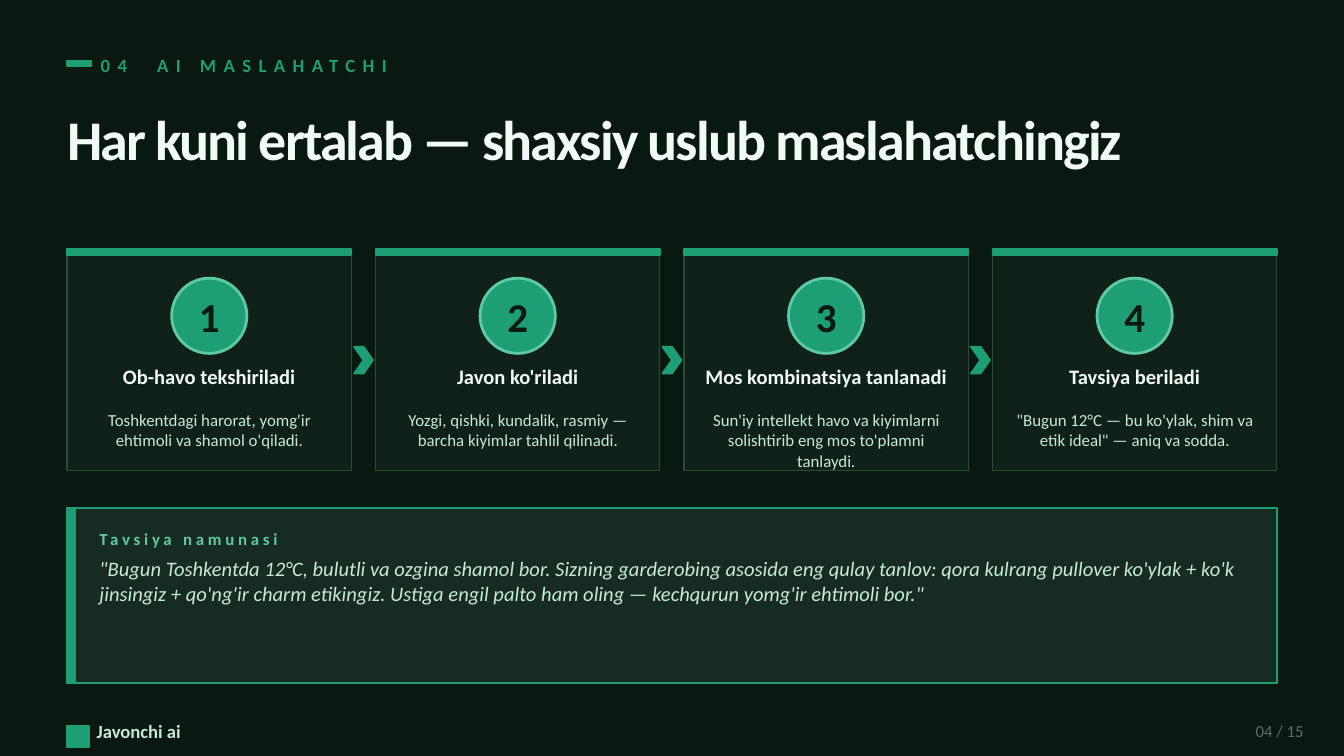
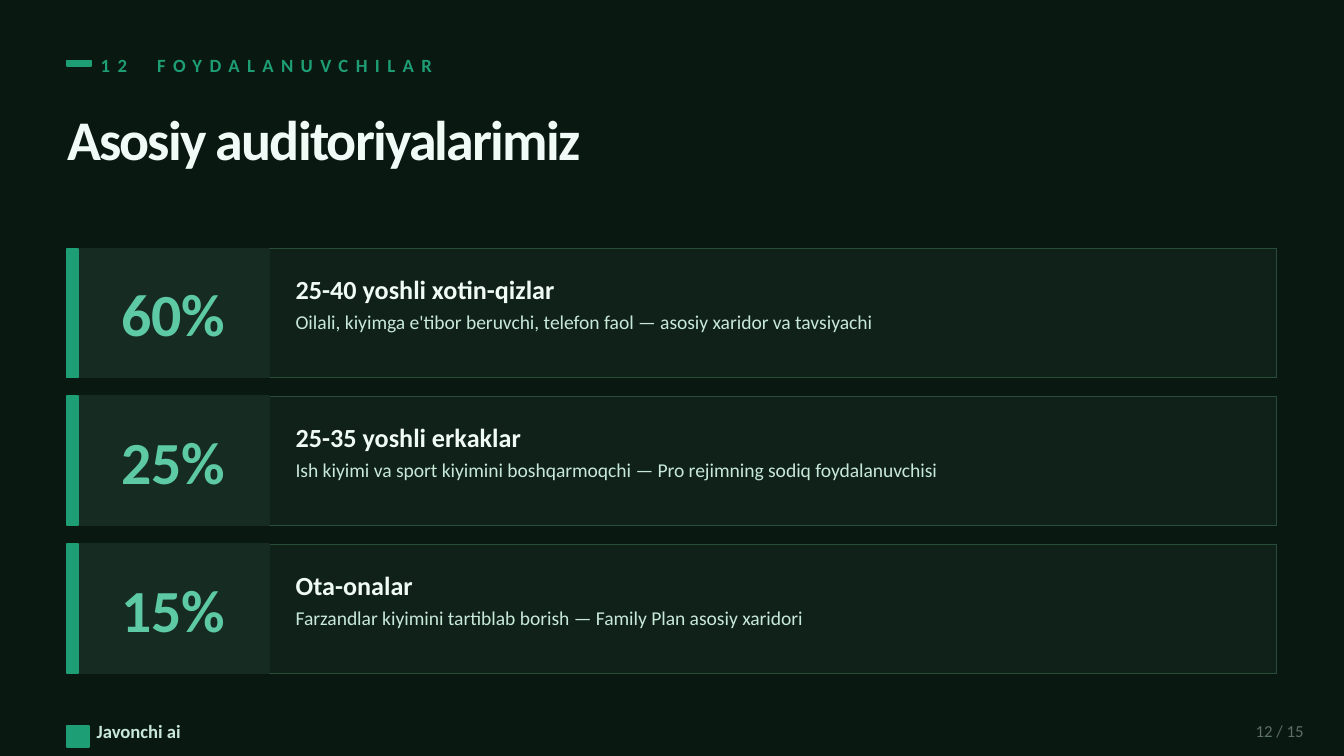
from dataclasses import dataclass

from lxml.etree import SubElement
from pptx import Presentation
from pptx.dml.color import RGBColor
from pptx.enum.shapes import MSO_SHAPE as Kind
from pptx.enum.text import MSO_ANCHOR as Anchor, PP_ALIGN as Align
from pptx.oxml.ns import qn
from pptx.slide import Slide
from pptx.text.text import _Paragraph as Para
from pptx.util import Inches, Pt

NIGHT = RGBColor(0x0A, 0x18, 0x12)
CARD = RGBColor(0x0F, 0x21, 0x19)
PANEL = RGBColor(0x16, 0x2C, 0x22)
EDGE = RGBColor(0x2A, 0x4D, 0x3A)
GREEN = RGBColor(0x1D, 0x9E, 0x75)
MINT = RGBColor(0x5D, 0xCA, 0xA5)
WHITE = RGBColor(0xF0, 0xFA, 0xF6)
PALE = RGBColor(0xC8, 0xE8, 0xD8)
GREY = RGBColor(0x5A, 0x70, 0x68)

LEFT, TOP, WIDTH = 0.5, 1.85, 9
TOTAL = 15
BRAND = "Javonchi ai"


@dataclass(frozen=True)
class Style:
    size: float
    color: RGBColor
    bold: bool = False
    italic: bool = False
    space: float = 0
    align: Align = Align.LEFT
    anchor: Anchor = Anchor.MIDDLE


@dataclass(frozen=True)
class Step:
    title: str
    body: str


@dataclass(frozen=True)
class Group:
    share: str
    title: str
    body: str


LABEL = Style(10, GREEN, bold=True, space=4)
TITLE = Style(30, WHITE, bold=True, space=-1)
NAME = Style(10, PALE, bold=True)
PAGE = Style(9, GREY, align=Align.RIGHT)
DIGIT = Style(22, NIGHT, bold=True, align=Align.CENTER)
STEP_HEAD = Style(11, WHITE, bold=True, align=Align.CENTER, anchor=Anchor.TOP)
STEP_BODY = Style(9, PALE, align=Align.CENTER, anchor=Anchor.TOP)
QUOTE_HEAD = Style(9, MINT, bold=True, space=2)
QUOTE = Style(11, PALE, italic=True, anchor=Anchor.TOP)
SHARE = Style(32, MINT, bold=True, align=Align.CENTER)
GROUP_HEAD = Style(14, WHITE, bold=True)
GROUP_BODY = Style(10.5, PALE, anchor=Anchor.TOP)

STEPS = [
    Step("Ob-havo tekshiriladi",
         "Toshkentdagi harorat, yomg'ir ehtimoli va shamol o'qiladi."),
    Step("Javon ko'riladi",
         "Yozgi, qishki, kundalik, rasmiy — barcha kiyimlar tahlil qilinadi."),
    Step("Mos kombinatsiya tanlanadi",
         "Sun'iy intellekt havo va kiyimlarni solishtirib eng mos to'plamni tanlaydi."),
    Step("Tavsiya beriladi",
         '"Bugun 12°C — bu ko\'ylak, shim va etik ideal" — aniq va sodda.'),
]

ADVICE = (
    '"Bugun Toshkentda 12°C, bulutli va ozgina shamol bor. Sizning garderobing '
    "asosida eng qulay tanlov: qora kulrang pullover ko'ylak + ko'k jinsingiz + "
    "qo'ng'ir charm etikingiz. Ustiga engil palto ham oling — kechqurun yomg'ir "
    'ehtimoli bor."'
)

GROUPS = [
    Group("60%", "25-40 yoshli xotin-qizlar",
          "Oilali, kiyimga e'tibor beruvchi, telefon faol — asosiy xaridor va tavsiyachi"),
    Group("25%", "25-35 yoshli erkaklar",
          "Ish kiyimi va sport kiyimini boshqarmoqchi — Pro rejimning sodiq foydalanuvchisi"),
    Group("15%", "Ota-onalar",
          "Farzandlar kiyimini tartiblab borish — Family Plan asosiy xaridori"),
]


def shape(slide: Slide, x: float, y: float, w: float, h: float,
          fill: RGBColor = GREEN, line: RGBColor = GREEN, weight: float = 1,
          kind: Kind = Kind.RECTANGLE) -> None:
    item = slide.shapes.add_shape(kind, Inches(x), Inches(y), Inches(w), Inches(h))
    item.shadow.inherit = False
    item.fill.solid()
    item.fill.fore_color.rgb = fill
    item.line.color.rgb = line
    item.line.width = Pt(weight)


def text(slide: Slide, x: float, y: float, w: float, h: float,
         words: str, style: Style) -> Para:
    box = slide.shapes.add_textbox(Inches(x), Inches(y), Inches(w), Inches(h))
    frame = box.text_frame
    looks = dict(word_wrap=True, vertical_anchor=style.anchor, margin_left=0,
                 margin_top=0, margin_right=0, margin_bottom=0)
    for key, value in looks.items():
        setattr(frame, key, value)
    para = frame.paragraphs[0]
    para.alignment = style.align
    run = para.add_run()
    run.text = words
    fonts = dict(name="Calibri", size=Pt(style.size), bold=style.bold,
                 italic=style.italic)
    for key, value in fonts.items():
        setattr(run.font, key, value)
    run.font.color.rgb = style.color
    if style.space:
        run._r.get_or_add_rPr().set("spc", str(int(style.space * 100)))
    return para


def tab(para: Para, place: float) -> None:
    stops = SubElement(para._p.get_or_add_pPr(), qn("a:tabLst"))
    SubElement(stops, qn("a:tab"), pos=str(Inches(place)), algn="l")


def frame(deck: Presentation, page: int, label: str, title: str) -> Slide:
    slide = deck.slides.add_slide(deck.slide_layouts[6])
    slide.background.fill.solid()
    slide.background.fill.fore_color.rgb = NIGHT
    shape(slide, LEFT, 0.45, 0.18, 0.04)
    tab(text(slide, 0.75, 0.34, 4, 0.28, f"{page:02}\t{label}", LABEL), 0.42)
    text(slide, LEFT, 0.72, WIDTH, 0.62, title, TITLE)
    shape(slide, LEFT, 5.4, 0.16, 0.16)
    text(slide, 0.72, 5.33, 3, 0.22, BRAND, NAME)
    text(slide, 9, 5.33, 0.7, 0.22, f"{page:02} / {TOTAL}", PAGE)
    return slide


def advice(deck: Presentation) -> None:
    slide = frame(deck, 4, "AI MASLAHATCHI",
                  "Har kuni ertalab — shaxsiy uslub maslahatchingiz")
    gap, disc, arrow = 0.18, 0.56, 0.14
    wide = (WIDTH - gap * (len(STEPS) - 1)) / len(STEPS)
    for i, step in enumerate(STEPS):
        x = LEFT + i * (wide + gap)
        spot = (x + (wide - disc) / 2, 2.07, disc, disc)
        shape(slide, x, TOP, wide, 1.65, CARD, EDGE, 0.75)
        shape(slide, x, TOP, wide, 0.05)
        shape(slide, *spot, line=MINT, weight=1.5, kind=Kind.OVAL)
        text(slide, *spot, str(i + 1), DIGIT)
        text(slide, x + 0.1, 2.71, wide - 0.2, 0.34, step.title, STEP_HEAD)
        text(slide, x + 0.12, 3.05, wide - 0.24, 0.42, step.body, STEP_BODY)
        if i < len(STEPS) - 1:
            shape(slide, x + wide + (gap - arrow) / 2, 2.58, arrow, 0.2,
                  kind=Kind.CHEVRON)
    shape(slide, LEFT, 3.78, WIDTH, 1.3, PANEL)
    shape(slide, LEFT, 3.78, 0.06, 1.3)
    text(slide, 0.74, 3.88, 9, 0.26, "Tavsiya namunasi", QUOTE_HEAD)
    text(slide, 0.74, 4.14, 8.66, 0.86, ADVICE, QUOTE)


def users(deck: Presentation) -> None:
    slide = frame(deck, 12, "FOYDALANUVCHILAR", "Asosiy auditoriyalarimiz")
    tall, pitch = 0.96, 1.1
    for i, group in enumerate(GROUPS):
        y = TOP + i * pitch
        shape(slide, LEFT, y, WIDTH, tall, CARD, EDGE, 0.75)
        shape(slide, LEFT, y, 1.5, tall, PANEL, PANEL)
        shape(slide, LEFT, y, 0.08, tall)
        text(slide, LEFT + 0.08, y, 1.42, tall, group.share, SHARE)
        text(slide, 2.2, y + 0.12, 7.2, 0.36, group.title, GROUP_HEAD)
        text(slide, 2.2, y + 0.46, 7.2, 0.46, group.body, GROUP_BODY)


def main() -> None:
    deck = Presentation()
    deck.slide_width = Inches(10)
    deck.slide_height = Inches(10) * 9 // 16
    advice(deck)
    users(deck)
    deck.save("out.pptx")


if __name__ == "__main__":
    main()
